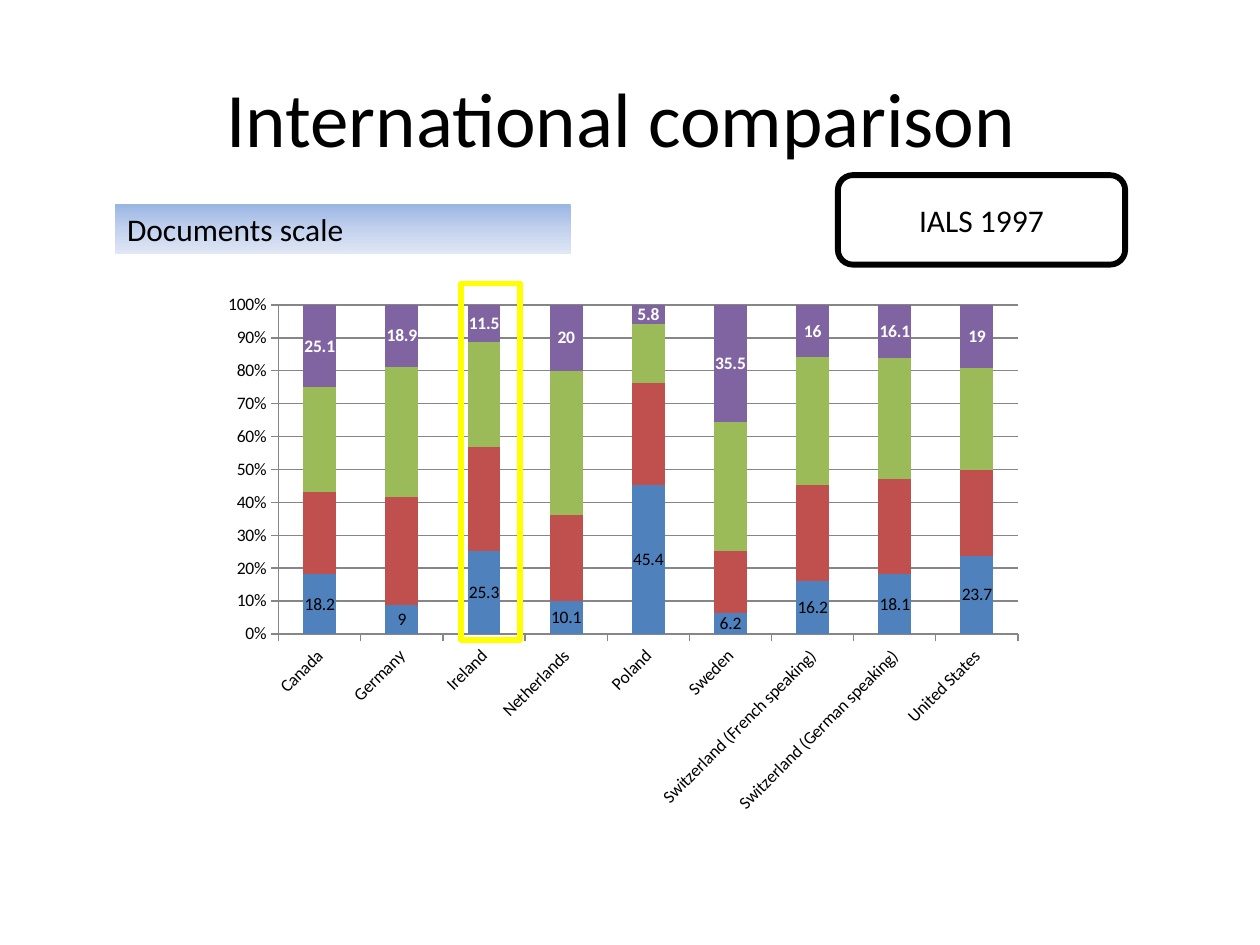
from copy import deepcopy

from lxml import etree
from pptx import Presentation
from pptx.chart.data import CategoryChartData
from pptx.dml.color import RGBColor
from pptx.enum.chart import XL_CHART_TYPE, XL_LABEL_POSITION, XL_TICK_MARK
from pptx.enum.shapes import MSO_SHAPE
from pptx.enum.text import MSO_ANCHOR, PP_ALIGN
from pptx.oxml.ns import qn
from pptx.util import Inches, Pt

FONT = "Calibri"
BLACK = RGBColor(0x00, 0x00, 0x00)
WHITE = RGBColor(0xFF, 0xFF, 0xFF)
YELLOW = RGBColor(0xFF, 0xFF, 0x00)
GRID_GREY = RGBColor(0x86, 0x86, 0x86)
BANNER_BLUES = (
    RGBColor(0x9A, 0xB5, 0xE4),
    RGBColor(0xC2, 0xD1, 0xED),
    RGBColor(0xE1, 0xE8, 0xF5),
)

COUNTRIES = (
    "Canada", "Germany", "Ireland", "Netherlands", "Poland", "Sweden",
    "Switzerland (French speaking)", "Switzerland (German speaking)",
    "United States",
)
# name, values, bar colour, label colour (None: no labels)
LEVELS = (
    ("Series 1", (18.2, 9, 25.3, 10.1, 45.4, 6.2, 16.2, 18.1, 23.7),
     RGBColor(0x4F, 0x81, 0xBD), BLACK),
    ("Series 2", (25, 33, 32, 26, 31, 19, 29, 29, 26),
     RGBColor(0xC0, 0x50, 0x4D), None),
    ("Series 3", (32, 40, 32, 44, 18, 39, 39, 37, 31),
     RGBColor(0x9B, 0xBB, 0x59), None),
    ("Series 4", (25.1, 18.9, 11.5, 20, 5.8, 35.5, 16, 16.1, 19),
     RGBColor(0x80, 0x64, 0xA2), WHITE),
)


def write(shape, text, size, align):
    paragraph = shape.text_frame.paragraphs[0]
    paragraph.text = text
    paragraph.alignment = align
    paragraph.font.name = FONT
    paragraph.font.size = Pt(size)
    paragraph.font.color.rgb = BLACK


def add_title(slide, left, top, width, height):
    title = slide.shapes.title
    title.left, title.top, title.width, title.height = left, top, width, height
    title.text_frame.vertical_anchor = MSO_ANCHOR.MIDDLE
    write(title, "International comparison ", 44, PP_ALIGN.CENTER)


def add_outline(slide, preset, box, color):
    outline = slide.shapes.add_shape(preset, *box)
    outline.shadow.inherit = False
    outline.fill.background()
    outline.line.color.rgb = color
    outline.line.width = Pt(3.35)
    return outline


def add_survey_badge(slide, *box):
    badge = add_outline(slide, MSO_SHAPE.ROUNDED_RECTANGLE, box, BLACK)
    badge.text_frame.vertical_anchor = MSO_ANCHOR.MIDDLE
    write(badge, "IALS 1997", 18, PP_ALIGN.CENTER)


def add_scale_banner(slide, *box):
    banner = slide.shapes.add_shape(MSO_SHAPE.RECTANGLE, *box)
    banner.shadow.inherit = False
    banner.line.fill.background()
    banner.fill.gradient()
    banner.fill.gradient_angle = 270
    first_stop = banner.fill._fill._gradFill.find(qn("a:gsLst"))[0]
    first_stop.addnext(deepcopy(first_stop))
    for index, (stop, color) in enumerate(
            zip(banner.fill.gradient_stops, BANNER_BLUES)):
        stop.position = index / 2
        stop.color.rgb = color
    banner.text_frame.vertical_anchor = MSO_ANCHOR.TOP
    write(banner, "Documents scale", 18, PP_ALIGN.LEFT)


def set_plot_area(chart, **fractions):
    """Fix the inner plot area, in fractions of the chart's box."""
    plot_area = chart._chartSpace.chart.plotArea
    for old_layout in plot_area.findall(qn("c:layout")):
        plot_area.remove(old_layout)
    layout = etree.Element(qn("c:layout"))
    plot_area.insert(0, layout)
    manual = etree.SubElement(layout, qn("c:manualLayout"))
    settings = {"layoutTarget": "inner", "xMode": "edge", "yMode": "edge"}
    for tag, value in (settings | fractions).items():
        etree.SubElement(manual, qn(f"c:{tag}")).set("val", str(value))


def style_axes(chart):
    for axis in (chart.category_axis, chart.value_axis):
        axis.major_tick_mark = XL_TICK_MARK.OUTSIDE
        axis.minor_tick_mark = XL_TICK_MARK.NONE
        axis.format.line.color.rgb = GRID_GREY
        axis.tick_labels.font.size = Pt(10)
    countries, shares = chart.category_axis, chart.value_axis
    countries.tick_labels.font.color.rgb = BLACK
    countries._element.txPr.bodyPr.set("rot", "-2700000")
    shares.minimum_scale, shares.maximum_scale = 0, 1
    shares.major_unit = 0.1
    shares.tick_labels.number_format = "0%"
    shares.tick_labels.number_format_is_linked = False
    shares.major_gridlines.format.line.color.rgb = GRID_GREY


def add_level_chart(slide, *box):
    data = CategoryChartData()
    data.categories = COUNTRIES
    for name, values, *_ in LEVELS:
        data.add_series(name, values)
    chart = slide.shapes.add_chart(
        XL_CHART_TYPE.COLUMN_STACKED_100, *box, data).chart
    chart.has_legend = False
    chart.has_title = False
    chart.font.name = FONT
    chart.font.size = Pt(10)
    chart.font.color.rgb = BLACK
    set_plot_area(chart, x=0.08, y=0.04, w=0.9, h=0.61)
    style_axes(chart)

    plot = chart.plots[0]
    plot.gap_width = 150
    plot.overlap = 100
    plot.vary_by_categories = False
    for series, (_, _, color, label_color) in zip(plot.series, LEVELS):
        series.format.fill.solid()
        series.format.fill.fore_color.rgb = color
        if label_color is not None:
            labels = series.data_labels
            labels.show_value = True
            labels.position = XL_LABEL_POSITION.CENTER
            labels.font.name = FONT
            labels.font.size = Pt(10)
            labels.font.bold = label_color == WHITE
            labels.font.color.rgb = label_color


def add_comparison(slide, left, top, width, height):
    """Place the chart and the frame that marks Ireland."""
    add_level_chart(slide, left, top, width, height)
    ireland = (left + Inches(1.97), top, Inches(0.47), Inches(2.83))
    add_outline(slide, MSO_SHAPE.RECTANGLE, ireland, YELLOW)


def main():
    presentation = Presentation()
    presentation.slide_width = Inches(10)
    presentation.slide_height = Inches(7.5)
    slide = presentation.slides.add_slide(presentation.slide_layouts[5])
    add_comparison(slide, Inches(1.69), Inches(2.25), Inches(6.52), Inches(4.28))
    add_survey_badge(slide, Inches(6.65), Inches(1.39), Inches(2.28), Inches(0.71))
    add_title(slide, Inches(0.5), Inches(0.3), Inches(9), Inches(1.25))
    add_scale_banner(slide, Inches(0.91), Inches(1.62), Inches(3.62), Inches(0.4))
    presentation.save("out.pptx")


if __name__ == "__main__":
    main()
